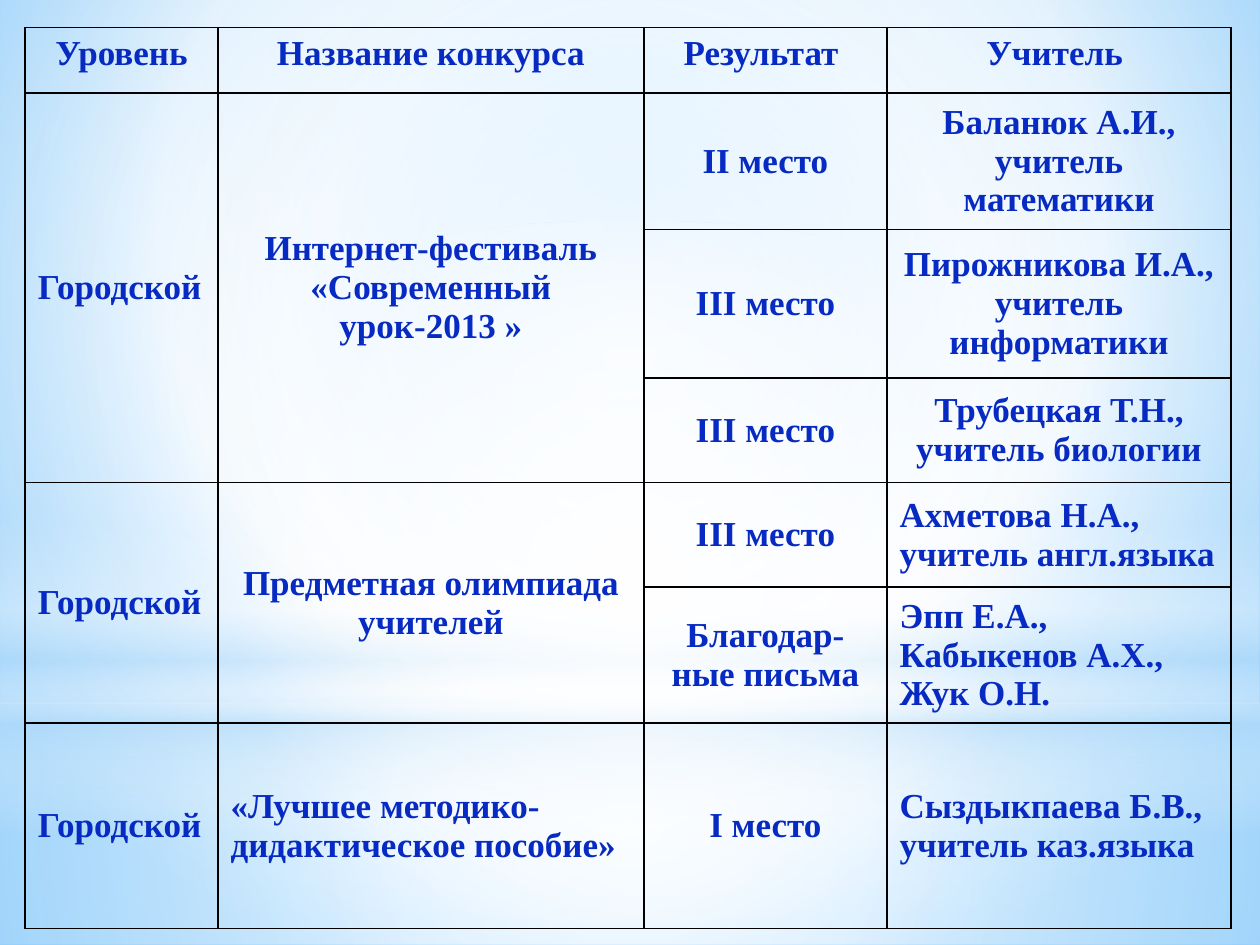
from lxml import etree
from pptx import Presentation
from pptx.dml.color import RGBColor
from pptx.enum.shapes import MSO_SHAPE
from pptx.enum.text import MSO_ANCHOR, PP_ALIGN
from pptx.oxml.ns import qn
from pptx.util import Inches, Pt

LEFT, CENTER = PP_ALIGN.LEFT, PP_ALIGN.CENTER
TOP, MIDDLE = MSO_ANCHOR.TOP, MSO_ANCHOR.MIDDLE
RECT, OVAL = MSO_SHAPE.RECTANGLE, MSO_SHAPE.OVAL

TEXT_BLUE = RGBColor(0x06, 0x2A, 0xC2)
BLACK = RGBColor(0, 0, 0)
WHITE = RGBColor(0xFF, 0xFF, 0xFF)
PALE = RGBColor(0xB4, 0xDC, 0xFA)
SKY = RGBColor(0x9E, 0xD5, 0xFF)
DEEP_SKY = RGBColor(0x5B, 0xB9, 0xFF)
FONT = dict(name="Times New Roman", size=Pt(20), bold=True)

# Gradient stops: position %, colour, opacity %
BACKGROUND = [(0, SKY, 100), (60, WHITE, 100), (100, DEEP_SKY, 100)]
MIDPOINT = (50, 50, 50, 50)
# shape, box, stops, focus of a circular gradient (None: vertical linear)
GLOWS = [
    (RECT, (0, 5.58, 10, 1.92), [(0, WHITE, 91), (37, WHITE, 76), (100, PALE, 79)], MIDPOINT),
    (RECT, (0, 0, 10, 5.58), [(0, WHITE, 89), (48, WHITE, 62), (100, PALE, 79)], MIDPOINT),
    (RECT, (0, 4.12, 10, 2.5), [(0, WHITE, 0), (29, WHITE, 30), (45, PALE, 40),
                                (55, WHITE, 26), (65, PALE, 60), (100, WHITE, 0)], None),
    (OVAL, (0, 1.75, 10, 5.58), [(0, WHITE, 100), (56, WHITE, 0)], MIDPOINT),
]

COLS = [1.53, 3.38, 1.93, 2.73]
ROWS = [0.52, 1.08, 1.18, 0.83, 0.83, 1.08, 1.63]
HEADER = ["Уровень", "Название конкурса", "Результат ", "Учитель "]
# level, contest, contest alignment, teacher alignment, [(result, teacher)]
CONTESTS = [
    ("Городской", "Интернет-фестиваль «Современный урок-2013 »", CENTER, CENTER, [
        ("ІІ место", "Баланюк А.И., учитель математики"),
        ("ІІІ место", "Пирожникова И.А., учитель информатики"),
        ("ІІІ место", "Трубецкая Т.Н., учитель биологии")]),
    ("Городской", "Предметная олимпиада учителей", CENTER, LEFT, [
        ("ІІІ место", "Ахметова Н.А., учитель англ.языка"),
        ("Благодар-ные письма", "Эпп Е.А., Кабыкенов А.Х., Жук О.Н.")]),
    ("Городской", "«Лучшее методико-дидактическое пособие»", LEFT, LEFT, [
        ("І место", "Сыздыкпаева Б.В., учитель каз.языка")]),
]


def sub(parent, tag, **attrs):
    return etree.SubElement(parent, qn(tag), {k: str(v) for k, v in attrs.items()})


def set_gradient(props, stops, focus):
    """Replace the solid fill in props by a gradient."""
    grad = etree.Element(qn("a:gradFill"), rotWithShape="1")
    stop_list = sub(grad, "a:gsLst")
    for pos, color, opacity in stops:
        stop = sub(stop_list, "a:gs", pos=pos * 1000)
        clr = sub(stop, "a:srgbClr", val=color)
        if opacity < 100:
            sub(clr, "a:alpha", val=opacity * 1000)
    if focus:
        circle = sub(grad, "a:path", path="circle")
        sub(circle, "a:fillToRect", **{k: v * 1000 for k, v in zip("ltrb", focus)})
    else:
        sub(grad, "a:lin", ang=90 * 60000, scaled=0)
    props.replace(props.find(qn("a:solidFill")), grad)


def add_glow(s, kind, box, stops, focus):
    sp = s.shapes.add_shape(kind, *map(Inches, box))
    sp.shadow.inherit = False
    sp.line.fill.background()
    sp.fill.solid()
    set_gradient(sp.element.spPr, stops, focus)


def set_borders(cell):
    props = cell._tc.get_or_add_tcPr()
    for i, side in enumerate(("lnL", "lnR", "lnT", "lnB")):
        line = etree.Element(qn("a:" + side), w=str(Pt(1)))
        sub(sub(line, "a:solidFill"), "a:srgbClr", val=BLACK)
        props.insert(i, line)


def write(cell, text, align=CENTER, anchor=MIDDLE):
    cell.vertical_anchor = anchor
    p = cell.text_frame.paragraphs[0]
    p.alignment = align
    r = p.add_run()
    r.text = text
    for name, value in FONT.items():
        setattr(r.font, name, value)
    r.font.color.rgb = TEXT_BLUE


def add_results(s):
    table = s.shapes.add_table(len(ROWS), len(COLS), Inches(0.2), Inches(0.22),
                               Inches(sum(COLS)), Inches(sum(ROWS))).table
    for col, width in zip(table.columns, COLS):
        col.width = Inches(width)
    for row, height in zip(table.rows, ROWS):
        row.height = Inches(height)
    for cell in table.iter_cells():
        cell.fill.background()
        set_borders(cell)

    for col, title in enumerate(HEADER):
        write(table.cell(0, col), title, anchor=TOP)
    row = 1
    for level, contest, contest_align, teacher_align, results in CONTESTS:
        last = row + len(results) - 1
        for col, text, align in ((0, level, LEFT), (1, contest, contest_align)):
            if last > row:
                table.cell(row, col).merge(table.cell(last, col))
            write(table.cell(row, col), text, align)
        for i, (result, teacher) in enumerate(results, row):
            write(table.cell(i, 2), result)
            write(table.cell(i, 3), teacher, teacher_align)
        row = last + 1


def main():
    prs = Presentation()
    prs.slide_width, prs.slide_height = Inches(10), Inches(7.5)
    s = prs.slides.add_slide(prs.slide_layouts[6])
    s.background.fill.solid()
    set_gradient(s.element.find(".//" + qn("p:bgPr")), BACKGROUND, (20, 10, 20, 60))
    for glow in GLOWS:
        add_glow(s, *glow)
    add_results(s)
    prs.save("out.pptx")


if __name__ == "__main__":
    main()
